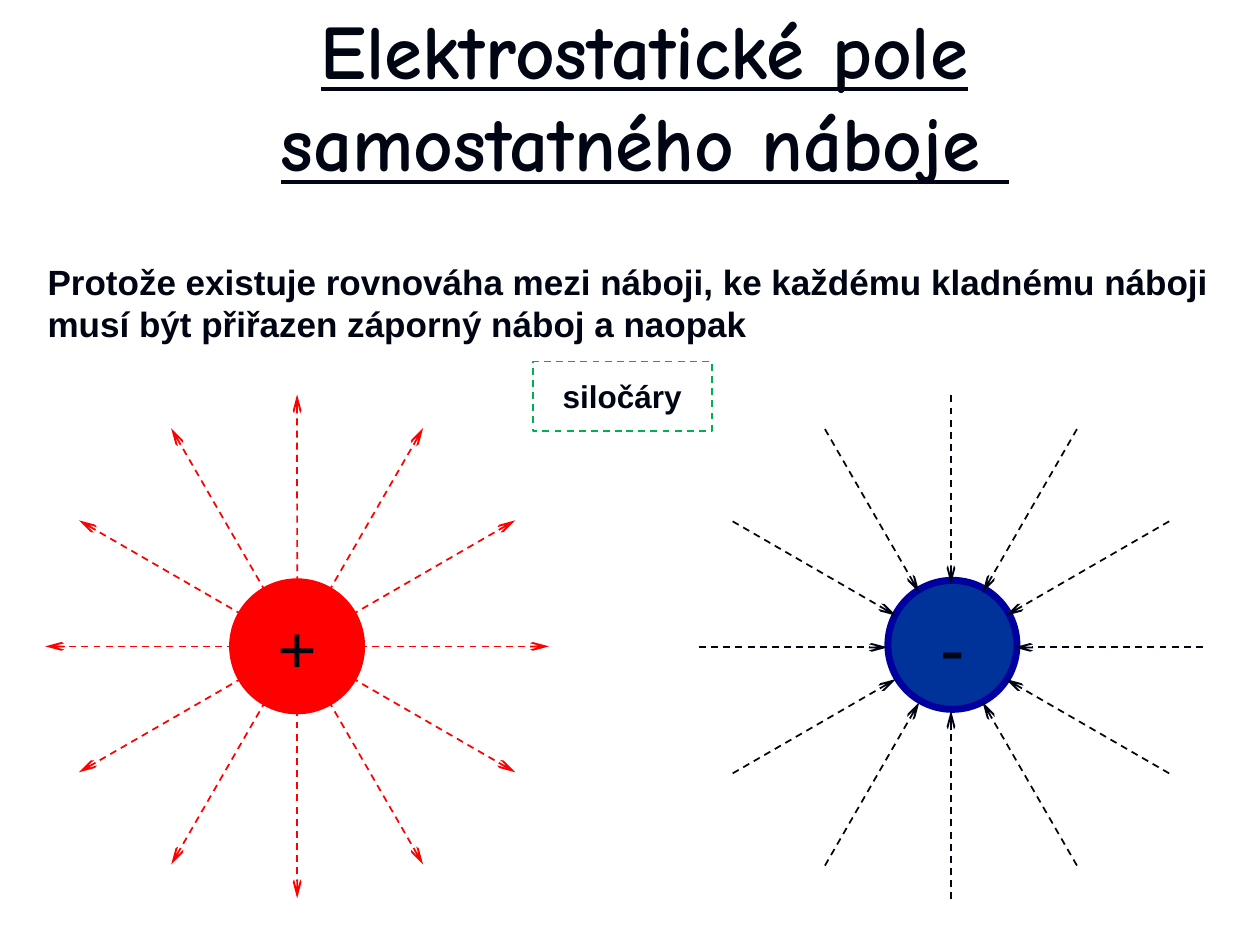
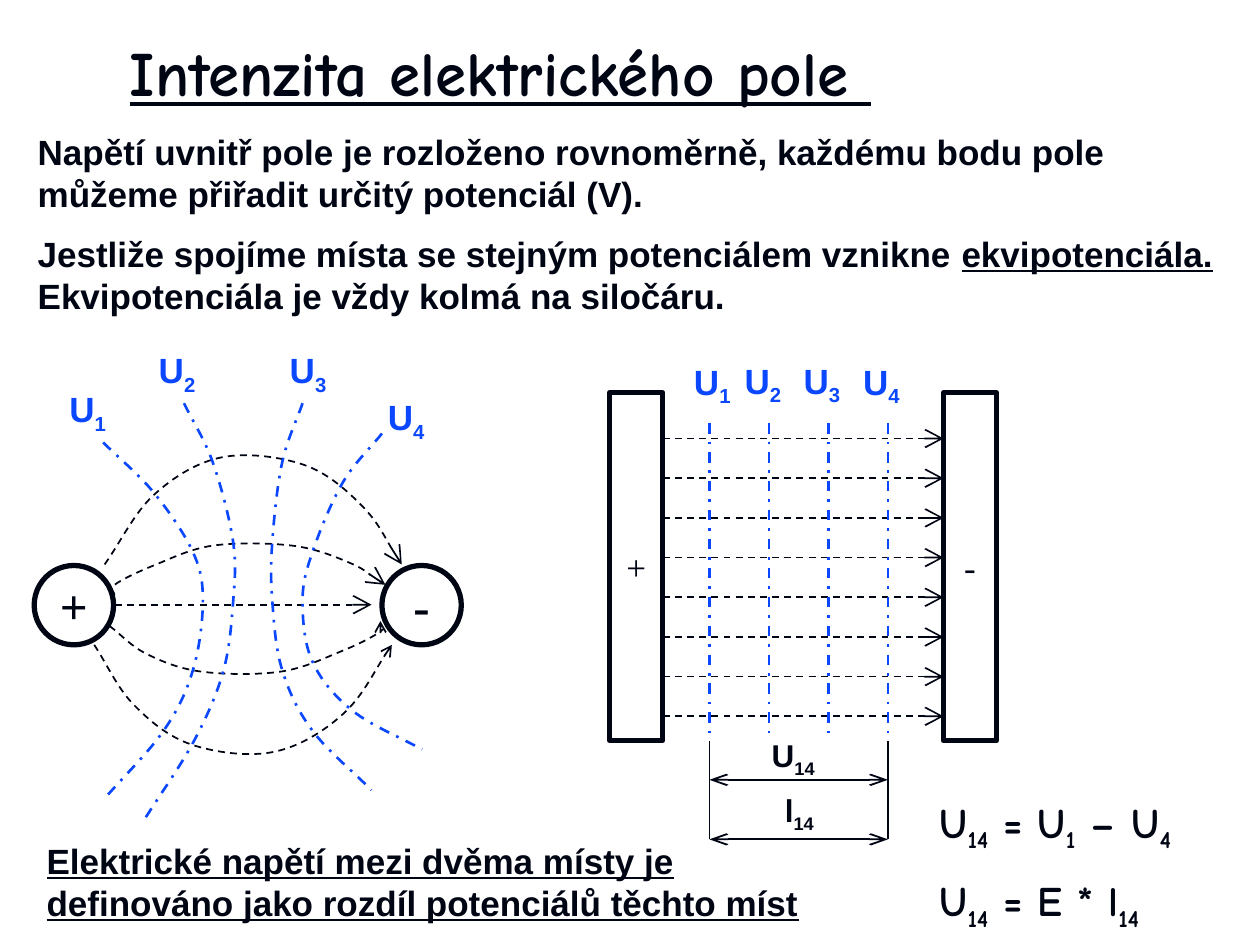
"""Build two slides on the electrostatic field of charges and its intensity."""
from math import cos, radians, sin

from lxml.etree import SubElement
from pptx import Presentation
from pptx.dml.color import RGBColor
from pptx.enum.dml import MSO_LINE
from pptx.enum.shapes import MSO_CONNECTOR, MSO_SHAPE
from pptx.enum.text import MSO_ANCHOR, MSO_AUTO_SIZE, PP_ALIGN
from pptx.oxml.ns import qn
from pptx.util import Cm, Pt

DASH, DOT = MSO_LINE.DASH, MSO_LINE.DASH_DOT
RECT, OVAL = MSO_SHAPE.RECTANGLE, MSO_SHAPE.OVAL
LEFT, MID = PP_ALIGN.LEFT, PP_ALIGN.CENTER
TOP, CORE = MSO_ANCHOR.TOP, MSO_ANCHOR.MIDDLE
COLORS = {"ink": "000514", "red": "FF0000", "navy": "003399", "rim": "00009E",
          "green": "00B050", "blue": "0A47FE"}

HEAD = {"name": "Comic Neue", "bold": True, "underline": True}
BODY = {"name": "Arial", "bold": True, "size": Pt(20)}
NOTE = {**BODY, "size": Pt(18)}
RULE = {**BODY, "underline": True}
MATH = {"name": "Comic Neue", "bold": True, "size": Pt(24)}
SIGN = {"name": "Times New Roman", "bold": True}
PLAIN = {"name": "Times New Roman", "size": Pt(20)}

LONE = {
    "title": ("Elektrostatické pole samostatného náboje ", (4.09, 0.71, 17.81, 2.41), 44),
    "text": "Protože existuje rovnováha mezi náboji, ke každému kladnému náboji "
            "musí být přiřazen záporný náboj a naopak",
    "charges": [
        {"sign": "+", "spot": (5.99, 13.03), "hub": (5.99, 13.03),
         "fill": "red", "rim": "red", "ray": "red", "out": True},
        {"sign": "-", "spot": (19.2, 13), "hub": (19.17, 13.05),
         "fill": "navy", "rim": "rim", "ray": "ink", "out": False},
    ],
}
FIELD = {
    "title": ("Intenzita elektrického pole ", (0.89, 0.53, 18.39, 1.8), 36),
    "text": ["Napětí uvnitř pole je rozloženo rovnoměrně, každému bodu pole "
             "můžeme přiřadit určitý potenciál (V).",
             "Jestliže spojíme místa se stejným potenciálem vznikne |ekvipotenciála. |"
             "Ekvipotenciála je vždy kolmá na siločáru."],
    "rule": "Elektrické napětí mezi dvěma místy je definováno jako rozdíl "
            "potenciálů těchto míst",
    "math": ["U|14| = U|1| – U|4", "U|14| = E * l|14"],
    "poles": [("+", 0.69, 12.29), ("-", 7.7, 19.02)],
    "tags": [[(1.3, 7.72), (3.1, 6.93), (5.74, 6.93), (7.72, 7.87)],
             [(13.89, 7.16), (14.91, 7.14), (16.1, 7.14), (17.3, 7.16)]],
    "spans": [("U|14", (15.09, 14.71, 1.8, 1.02), 15.72),
              ("l|14", (15.11, 15.82, 2.01, 1.02), 16.92)],
}
FORCE = [
    ("lg", [(2.31, 11.99), (2.31, 11.79), (3.1, 11.4), (4.29, 11), (5.89, 11),
            (7.01, 11.33), (7.77, 11.79)]),
    ("med", [(2.21, 12.62), (2.95, 13.18), (4.06, 13.54), (5.66, 13.54),
             (6.88, 13.13), (7.67, 12.73), (7.67, 12.52)]),
    ("lg", [(2.11, 11.38), (3.1, 9.98), (4.47, 9.22), (6.12, 9.37),
            (7.29, 10.19), (8.1, 11.38)]),
    ("med", [(1.9, 13), (2.69, 14.2), (3.86, 15.01), (5.51, 15.16),
             (6.91, 14.4), (7.9, 13)]),
]
LEVELS = [
    [(2.08, 8.92), (3.1, 9.93), (3.89, 11.13), (4.09, 12.12), (3.89, 13.51),
     (3.3, 14.73), (2.08, 16.13)],
    [(3.71, 8.13), (4.29, 9.32), (4.7, 10.92), (4.7, 12.14), (4.5, 13.54),
     (3.91, 14.94), (2.9, 16.54)],
    [(6.1, 8.13), (5.69, 9.32), (5.49, 10.92), (5.49, 12.12), (5.69, 13.51),
     (6.3, 14.73), (7.49, 15.93)],
    [(7.7, 8.74), (6.91, 9.73), (6.3, 11.13), (6.1, 12.12), (6.3, 13.34),
     (7.11, 14.33), (8.51, 15.11)],
]


def rgb(name):
    return RGBColor.from_string(COLORS[name])


def write(shape, lines, font, align=LEFT, anchor=TOP, wrap=True, pad=None, gap=0, odd="sub"):
    """Fill a shape with text; every second part between bars gets the odd style."""
    frame = shape.text_frame
    look = {"word_wrap": wrap, "vertical_anchor": anchor, "auto_size": MSO_AUTO_SIZE.NONE}
    if pad is not None:
        look.update({f"margin_{side}": Cm(pad) for side in ("left", "top", "right", "bottom")})
    for key, value in look.items():
        setattr(frame, key, value)
    for i, line in enumerate(lines):
        para = frame.add_paragraph() if i else frame.paragraphs[0]
        para.alignment, para.space_before = align, Pt(gap if i else 0)
        for j, part in enumerate(line.split("|")):
            run = para.add_run()
            run.text = part
            for key, value in font.items():
                setattr(run.font, key, value)
            run.font.color.rgb = run.font.color.rgb if "color" in font else rgb("ink")
            if j % 2 and odd == "sub":
                run.font._element.set("baseline", "-25000")
            elif j % 2:
                run.font.underline = True


def head(slide, text, box, size):
    shape = slide.shapes.title
    for key, value in zip(("left", "top", "width", "height"), box):
        setattr(shape, key, Cm(value))
    write(shape, [text], {**HEAD, "size": Pt(size)}, MID, CORE)


def label(slide, box, lines, font, **look):
    shape = slide.shapes.add_textbox(*map(Cm, box))
    write(shape, lines, font, **look)
    return shape


def stroke(shape, color, width=1, dash=None, tips=(), size=("lg", "lg")):
    """Style a line, its arrowheads and drop its shadow."""
    shape.line.color.rgb, shape.line.width = rgb(color), Pt(width)
    if dash:
        shape.line.dash_style = dash
    props = shape._element.spPr
    for tip in tips:
        SubElement(props.find(qn("a:ln")), qn(f"a:{tip}End"), type="arrow", w=size[0], len=size[1])
    SubElement(props, qn("a:effectLst"))


def link(slide, start, end, color, **look):
    shape = slide.shapes.add_connector(MSO_CONNECTOR.STRAIGHT, *map(Cm, (*start, *end)))
    stroke(shape, color, **look)


def form(slide, kind, box, text, font, rim, width, dash=None, fill=None, **look):
    shape = slide.shapes.add_shape(kind, *map(Cm, box))
    if fill:
        shape.fill.solid()
        shape.fill.fore_color.rgb = rgb(fill)
    else:
        shape.fill.background()
    stroke(shape, rim, width, dash)
    write(shape, [text], font, MID, CORE, **look)


def curve(slide, knots, color, **look):
    """Draw a smooth line through the knots, with tangents set by their neighbours."""
    first, *rest = [tuple(map(Cm, knot)) for knot in knots]
    build = slide.shapes.build_freeform(*first)
    build.add_line_segments(rest, close=False)
    shape = build.convert_to_shape()
    shape.fill.background()
    stroke(shape, color, **look)
    route = next(shape._element.iter(qn("a:path")))
    dots = [(int(dot.get("x")), int(dot.get("y"))) for dot in route.iter(qn("a:pt"))]
    ends = [dots[0], *dots, dots[-1]]
    for i, step in enumerate(route.findall(qn("a:lnTo"))):
        a, b, c, d = ends[i:i + 4]
        step.tag = qn("a:cubicBezTo")
        step.remove(step[0])
        one = [q + (r - p) / (6 if i else 3) for p, q, r in zip(a, b, c)]
        last = i == len(rest) - 1
        two = [q - (r - p) / (3 if last else 6) for p, q, r in zip(b, c, d)]
        for x, y in (one, two, c):
            SubElement(step, qn("a:pt"), x=str(round(x)), y=str(round(y)))


def lone(slide):
    head(slide, *LONE["title"])
    label(slide, (0.71, 5.13, 24.61, 1.96), [LONE["text"]], BODY)
    form(slide, RECT, (10.74, 7.29, 3.61, 1.4), "siločáry", NOTE, "green", 1, DASH, wrap=False)
    for item in LONE["charges"]:
        x, y = item["spot"]
        form(slide, OVAL, (x - 1.3, y - 1.3, 2.6, 2.6), item["sign"], {**SIGN, "size": Pt(40)},
             item["rim"], 4, fill=item["fill"])
        x, y = item["hub"]
        for angle in range(0, 360, 30):
            near, far = [(x + r * cos(radians(angle)), y + r * sin(radians(angle)))
                         for r in (1.27, 5.08)]
            ends = (near, far) if item["out"] else (far, near)
            link(slide, *ends, item["ray"], dash=DASH, tips=["tail"], size=("sm", "lg"))


def field(slide):
    head(slide, *FIELD["title"])
    label(slide, (0.51, 2.51, 24.21, 4.06), FIELD["text"], BODY, gap=10, odd="under")
    label(slide, (0.69, 16.79, 16, 1.96), [FIELD["rule"]], RULE)
    label(slide, (18.69, 15.93, 6.2, 2.82), FIELD["math"], MATH, gap=12)
    for sign, ball, plate in FIELD["poles"]:
        form(slide, OVAL, (ball, 11.4, 1.6, 1.6), sign, {**SIGN, "size": Pt(28)},
             "ink", 3, wrap=False)
        form(slide, RECT, (plate, 7.92, 1.07, 7.01), sign, PLAIN, "ink", 3, wrap=False, pad=0.1)
    link(slide, (2.31, 12.19), (7.49, 12.19), "ink", dash=DASH, tips=["tail"])
    for size, knots in FORCE:
        curve(slide, knots, "ink", dash=DASH, tips=["tail"], size=(size, size))
    for i in range(8):
        y = 8.84 + 0.8 * i
        link(slide, (13.36, y), (19.02, y), "ink", dash=DASH, tips=["tail"])
    for i, knots in enumerate(LEVELS):
        x = 14.3 + 1.2 * i
        curve(slide, knots, "blue", width=1.5, dash=DOT)
        link(slide, (x, 8.53), (x, 14.94), "blue", width=1.5, dash=DOT)
    for row in FIELD["tags"]:
        for i, spot in enumerate(row, 1):
            tag = label(slide, (*spot, 0.97, 1.04), [f"U|{i}"], BODY, wrap=False, pad=0.1)
            for run in tag.text_frame.paragraphs[0].runs:
                run.font.color.rgb = rgb("blue")
    for x in (14.3, 17.9):
        link(slide, (x, 14.94), (x, 16.92), "ink")
    for text, box, y in FIELD["spans"]:
        label(slide, box, [text], NOTE, align=MID)
        link(slide, (14.3, y), (17.9, y), "ink", tips=["head", "tail"], size=("med", "lg"))


def main():
    deck = Presentation()
    deck.slide_width, deck.slide_height = Cm(25.4), Cm(19.05)
    for draw in (lone, field):
        draw(deck.slides.add_slide(deck.slide_layouts[5]))
    deck.save("out.pptx")


if __name__ == "__main__":
    main()
